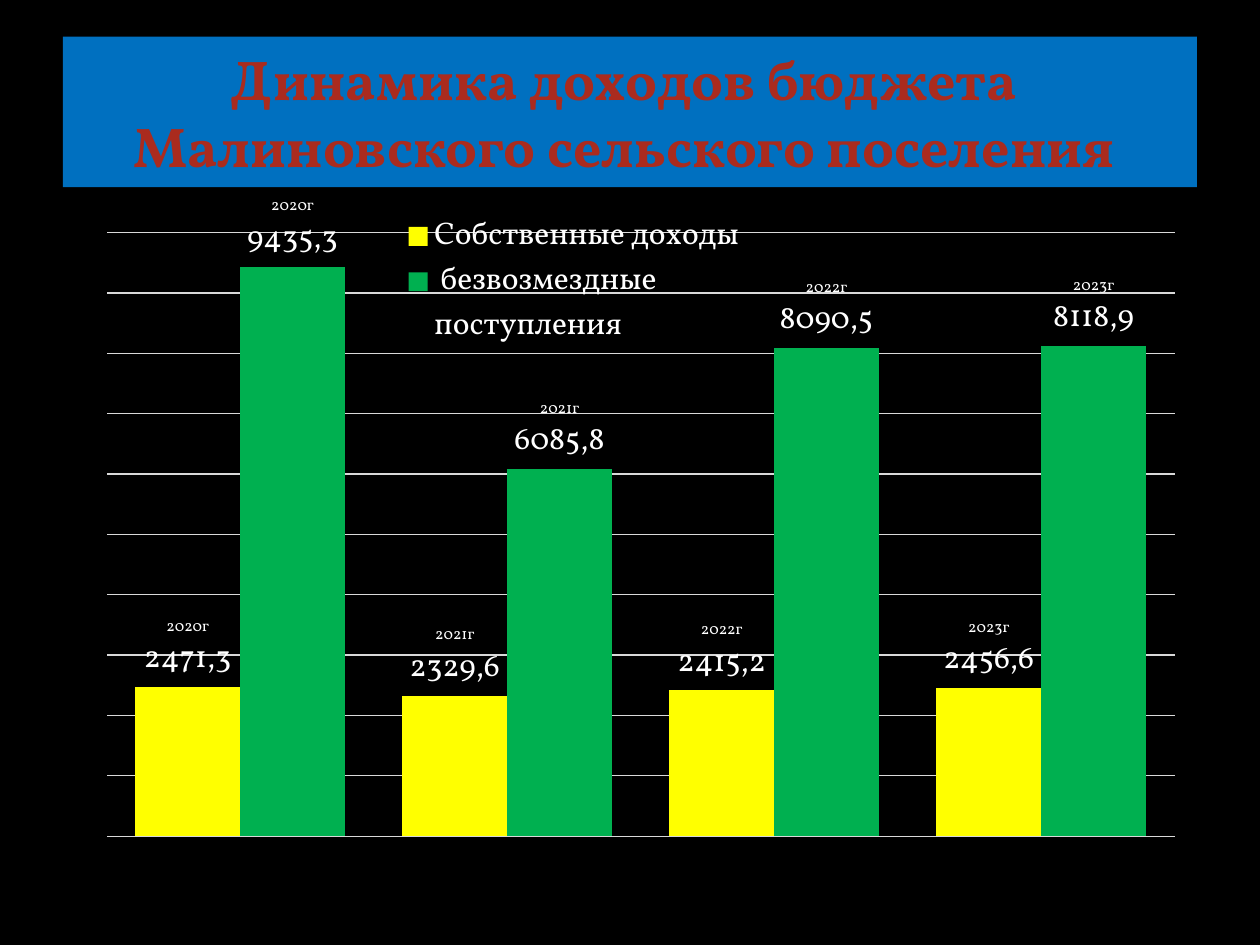
from lxml import etree
from pptx import Presentation
from pptx.chart.data import CategoryChartData
from pptx.dml.color import RGBColor
from pptx.enum.chart import XL_CHART_TYPE as ChartType
from pptx.enum.chart import XL_LABEL_POSITION as LabelPosition
from pptx.enum.chart import XL_LEGEND_POSITION as LegendPosition
from pptx.enum.shapes import MSO_SHAPE as Shape
from pptx.enum.text import MSO_ANCHOR as Anchor
from pptx.enum.text import PP_ALIGN as Align
from pptx.oxml.ns import qn
from pptx.util import Pt

COLORS = {
    "background": "000000",
    "banner": "0070C0",
    "title": "AA2B1E",
    "text": "FFFFFF",
    "grid": "D9D9D9",
    "own": "FFFF00",
    "grants": "00B050",
}
FONT = "Vollkorn"
YEARS = ["2020г", "2021г", "2022г", "2023г"]
INCOME = [
    ("Собственные доходы", "own", [2471.3, 2329.6, 2415.2, 2456.6]),
    (" безвозмездные поступления ", "grants", [9435.3, 6085.8, 8090.5, 8118.9]),
]


def add_text(para, text, size, color, bold=False):
    span = para.add_run()
    span.text = text
    span.font.name = FONT
    span.font.size = Pt(size)
    span.font.bold = bold
    span.font.color.rgb = RGBColor.from_string(COLORS[color])


def set_layout(parent, anchor, **values):
    for old in parent.findall(qn("c:layout")):
        parent.remove(old)
    layout = etree.Element(qn("c:layout"))
    manual = etree.SubElement(layout, qn("c:manualLayout"))
    for name, value in values.items():
        etree.SubElement(manual, qn(f"c:{name}")).set("val", str(value))
    if anchor is None:
        parent.insert(0, layout)
    else:
        anchor.addnext(layout)


deck = Presentation()
deck.slide_width, deck.slide_height = Pt(720), Pt(540)
page = deck.slides.add_slide(deck.slide_layouts[6])
page.background.fill.solid()
page.background.fill.fore_color.rgb = RGBColor.from_string(COLORS["background"])

banner = page.shapes.add_shape(Shape.RECTANGLE, Pt(36), Pt(21), Pt(648), Pt(86))
banner.shadow.inherit = False
banner.fill.solid()
banner.fill.fore_color.rgb = RGBColor.from_string(COLORS["banner"])
banner.line.fill.background()
banner.text_frame.word_wrap = True
banner.text_frame.vertical_anchor = Anchor.MIDDLE
para = banner.text_frame.paragraphs[0]
para.alignment = Align.CENTER
add_text(para, "Динамика доходов бюджета ", 32, "title", bold=True)
para.add_line_break()
add_text(para, "Малиновского сельского поселения ", 32, "title", bold=True)

data = CategoryChartData()
data.categories = ["1", "2", "3", "4"]
for name, color, values in INCOME:
    data.add_series(name, values)
chart = page.shapes.add_chart(
    ChartType.COLUMN_CLUSTERED, Pt(48.25), Pt(112.3), Pt(635.75), Pt(373), data
).chart
chart.has_title = False
chart.font.name = FONT
chart.font.size = Pt(18)
chart.font.color.rgb = RGBColor.from_string(COLORS["text"])

chart.category_axis.visible = False
axis = chart.value_axis
axis.visible = False
axis.minimum_scale, axis.maximum_scale, axis.major_unit = 0, 10000, 1000
axis.has_major_gridlines = True
axis.major_gridlines.format.line.width = Pt(0.75)
axis.major_gridlines.format.line.color.rgb = RGBColor.from_string(COLORS["grid"])

plot = chart.plots[0]
plot.gap_width = 55
plot.overlap = 0
plot.vary_by_categories = False
for series, (name, color, values) in zip(plot.series, INCOME):
    series.format.fill.solid()
    series.format.fill.fore_color.rgb = RGBColor.from_string(COLORS[color])
    series.invert_if_negative = False
    series.data_labels.show_value = True
    for index, (year, value) in enumerate(zip(YEARS, values)):
        label = series.points[index].data_label
        frame = label.text_frame
        add_text(frame.paragraphs[0], year, 9, "text")
        add_text(frame.add_paragraph(), f"{value:.1f}".replace(".", ","), 18, "text")
        label.position = LabelPosition.OUTSIDE_END

chart.has_legend = True
legend = chart.legend
legend.position = LegendPosition.RIGHT
legend.include_in_layout = True
legend.font.name = FONT
legend.font.size = Pt(18)
legend.font.color.rgb = RGBColor.from_string(COLORS["text"])

legend_xml = chart.element.find(".//" + qn("c:legend"))
set_layout(
    legend_xml, legend_xml.find(qn("c:legendPos")),
    xMode="edge", yMode="edge", x=0.28, y=0.02, w=0.32, h=0.21,
)
set_layout(
    chart.element.find(".//" + qn("c:plotArea")), None,
    layoutTarget="inner", xMode="edge", yMode="edge", x=0.02, y=0.05, w=0.96, h=0.93,
)

deck.save("out.pptx")
